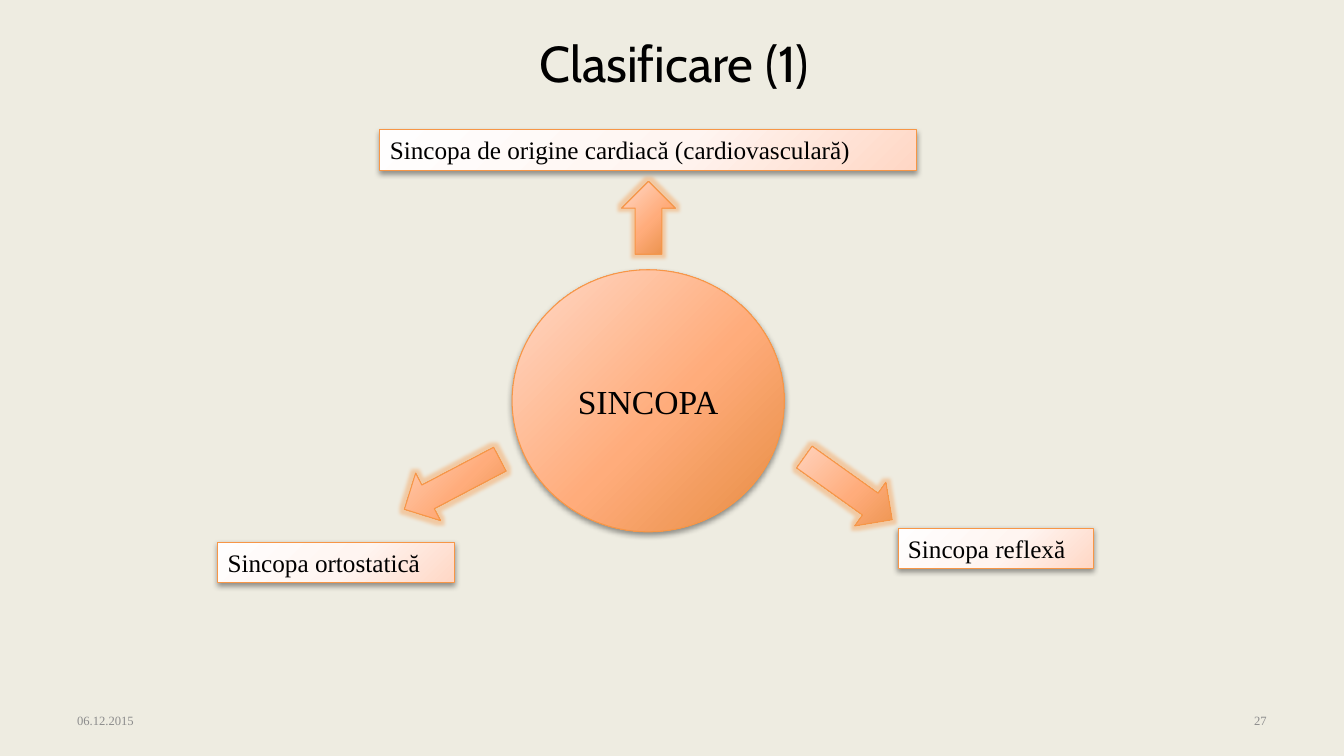
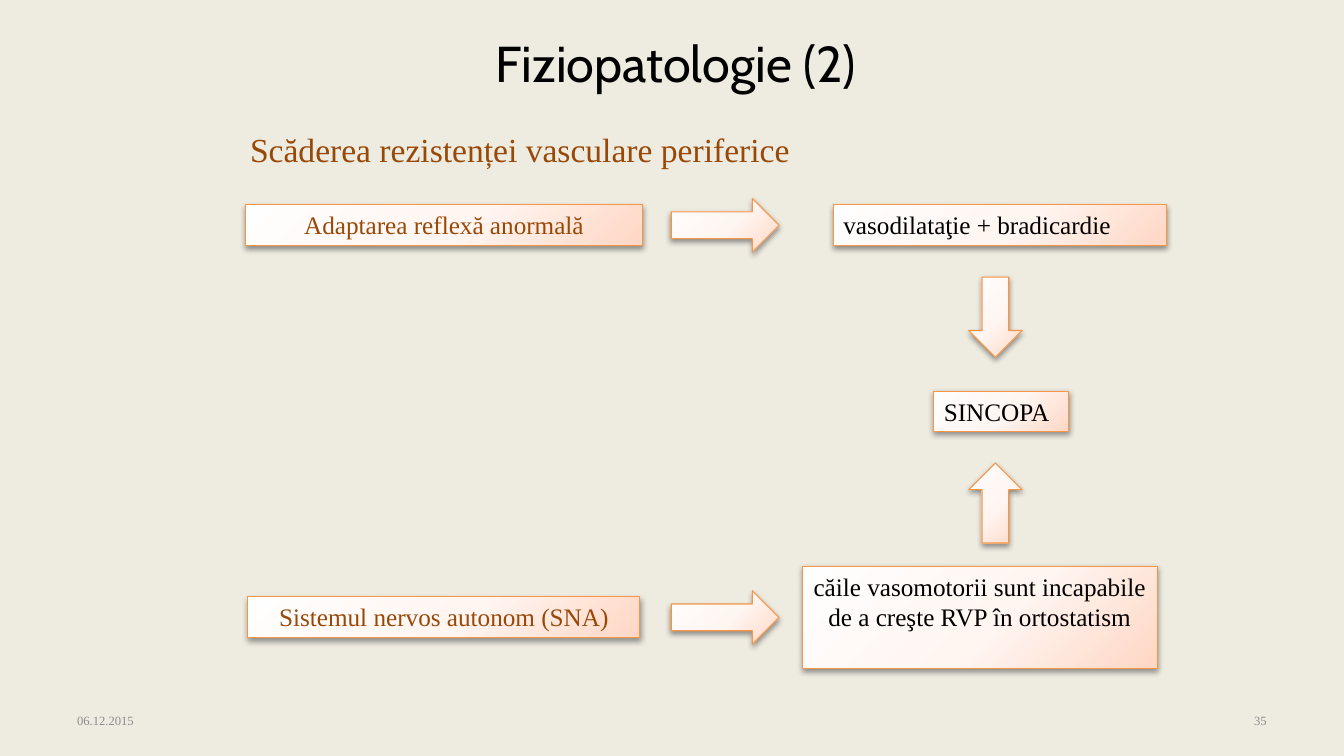
from dataclasses import dataclass

from lxml.etree import SubElement as Sub
from pptx import Presentation
from pptx.dml.color import RGBColor as Rgb
from pptx.enum.shapes import MSO_SHAPE as Geo
from pptx.enum.text import MSO_ANCHOR as Anchor, MSO_AUTO_SIZE as Auto, PP_ALIGN as Align
from pptx.oxml.ns import qn
from pptx.util import Pt

HEX = {
    "back": "EEECE1", "ink": "000000", "brown": "984807",
    "gray": "8C8C8C", "edge": "F79646", "shade": "000000",
}
PALE = ("FFFEFE", "FFF5F1", "FFD7C5")
PEACH = ("FFD9C8", "FFAC7B", "E68C41")
SERIF, SANS = "Times New Roman", "Cabin"
DATE = "06.12.2015"
ROW, WIDE, LONG = 29, 38.2, 77


@dataclass(frozen=True)
class Box:
    x: float
    y: float
    w: float
    h: float


@dataclass(frozen=True)
class Type:
    size: float = 18
    color: str = "ink"
    font: str = SERIF
    align: Align = Align.LEFT
    anchor: Anchor = Anchor.TOP


@dataclass(frozen=True)
class Node:
    box: Box
    text: str = ""
    type: Type = Type()
    geo: Geo = Geo.RECTANGLE
    tones: tuple = PALE
    turn: float = 0
    glow: bool = False


@dataclass(frozen=True)
class Page:
    title: str
    box: Box
    num: str
    nodes: tuple
    head: str = ""


def place(shape, box: Box) -> None:
    shape.left, shape.top = Pt(box.x), Pt(box.y)
    shape.width, shape.height = Pt(box.w), Pt(box.h)


def write(shape, text: str, style: Type) -> None:
    frame = shape.text_frame
    frame.text = text
    frame.word_wrap = True
    frame.auto_size = Auto.NONE
    frame.vertical_anchor = style.anchor
    for para in frame.paragraphs:
        para.alignment = style.align
        for run in para.runs:
            run.font.name = style.font
            run.font.size = Pt(style.size)
            run.font.color.rgb = Rgb.from_string(HEX[style.color])


def label(slide, box: Box, text: str, style: Type) -> None:
    write(slide.shapes.add_textbox(Pt(box.x), Pt(box.y), Pt(box.w), Pt(box.h)), text, style)


def tint(host, color: str, alpha: int) -> None:
    tone = Sub(host, qn("a:srgbClr"), val=color)
    Sub(tone, qn("a:alpha"), val=str(alpha * 1000))


def blend(shape, tones: tuple) -> None:
    shape.fill.background()
    props = shape._element.spPr
    old = props.find(qn("a:noFill"))
    grad = Sub(props, qn("a:gradFill"), rotWithShape="0")
    stops = Sub(grad, qn("a:gsLst"))
    for pos, tone in zip((0, 55, 100), tones):
        stop = Sub(stops, qn("a:gs"), pos=str(pos * 1000))
        Sub(stop, qn("a:srgbClr"), val=tone)
    way = Sub(grad, qn("a:path"), path="circle")
    Sub(way, qn("a:fillToRect"), l="-40000", t="-90000", r="140000", b="190000")
    props.replace(old, grad)


def effect(shape, glow: bool) -> None:
    shape.shadow.inherit = False
    group = shape._element.spPr.find(qn("a:effectLst"))
    if glow:
        tint(Sub(group, qn("a:glow"), rad=str(Pt(5))), HEX["edge"], 40)
    else:
        drop = Sub(group, qn("a:outerShdw"), blurRad=str(Pt(4.1)), dist=str(Pt(2)),
                   dir="5400000", rotWithShape="0")
        tint(drop, HEX["shade"], 40)


def draw(slide, node: Node) -> None:
    box = node.box
    shape = slide.shapes.add_shape(node.geo, Pt(box.x), Pt(box.y), Pt(box.w), Pt(box.h))
    shape.rotation = node.turn
    blend(shape, node.tones)
    shape.line.color.rgb = Rgb.from_string(HEX["edge"])
    shape.line.width = Pt(0.75)
    effect(shape, node.glow)
    if node.text:
        write(shape, node.text, node.type)


def build(deck, page: Page) -> None:
    slide = deck.slides.add_slide(deck.slide_layouts.get_by_name("Title Only"))
    place(slide.shapes.title, page.box)
    write(slide.shapes.title, page.title, Type(36, font=SANS))
    foot = Type(9, "gray", anchor=Anchor.MIDDLE)
    label(slide, Box(48, 500.5, 224, 28.8), DATE, foot)
    label(slide, Box(688, 500.5, 224, 28.8), page.num,
          Type(9, "gray", align=Align.RIGHT, anchor=Anchor.MIDDLE))
    if page.head:
        label(slide, Box(171.5, 88.5, 453, 36), page.head, Type(24, "brown"))
    for node in page.nodes:
        draw(slide, node)


def ray(x: float, y: float, high: float, geo: Geo, turn: float = 0) -> Node:
    return Node(Box(x, y, WIDE, high), geo=geo, tones=PEACH, turn=turn, glow=True)


def right(y: float) -> Node:
    return Node(Box(479.5, y, LONG, WIDE), geo=Geo.RIGHT_ARROW)


def post(y: float, geo: Geo) -> Node:
    return Node(Box(691.9, y, WIDE, 57.2), geo=geo)


CAUSE = Type(color="brown", align=Align.CENTER)
CORE = Type(24, align=Align.CENTER, anchor=Anchor.MIDDLE)

PAGES = (
    Page("Clasificare (1)", Box(378, 19.4, 216, 51), "27", (
        Node(Box(641.5, 377.3, 139.7, ROW), "Sincopa reflexă"),
        Node(Box(155.5, 387.4, 169.2, ROW), "Sincopa ortostatică"),
        Node(Box(271.4, 92.6, 383, ROW), "Sincopa de origine cardiacă (cardiovasculară)"),
        Node(Box(365.8, 192.7, 194.4, 187.2), "SINCOPA", CORE, Geo.OVAL, PEACH),
        ray(444.2, 129.6, 52, Geo.UP_ARROW),
        ray(303.8, 307.4, LONG, Geo.DOWN_ARROW, 62.3),
        ray(586.8, 310.3, LONG, Geo.DOWN_ARROW, 305.5),
    )),
    Page("Fiziopatologie (2)", Box(347, 19.4, 289.4, 51), "35", (
        Node(Box(175.7, 146.2, 283, ROW), "Adaptarea reflexă anormală", CAUSE),
        Node(Box(595.4, 146.2, 237.6, ROW), "vasodilataţie + bradicardie"),
        right(141.8),
        post(198, Geo.DOWN_ARROW),
        Node(Box(667.1, 279.4, 96.5, ROW), "SINCOPA"),
        Node(Box(177.1, 426.2, 280, ROW), "Sistemul nervos autonom (SNA)", CAUSE),
        right(421.9),
        Node(Box(573.1, 404.6, 253.4, 72.7),
             "căile vasomotorii sunt incapabile de a creşte RVP în ortostatism",
             Type(align=Align.CENTER)),
        post(330.7, Geo.UP_ARROW),
    ), "Scăderea rezistenței vasculare periferice"),
)


def main() -> None:
    deck = Presentation()
    deck.slide_width, deck.slide_height = Pt(960), Pt(540)
    fill = deck.slide_master.background.fill
    fill.solid()
    fill.fore_color.rgb = Rgb.from_string(HEX["back"])
    for page in PAGES:
        build(deck, page)
    deck.save("out.pptx")


if __name__ == "__main__":
    main()
